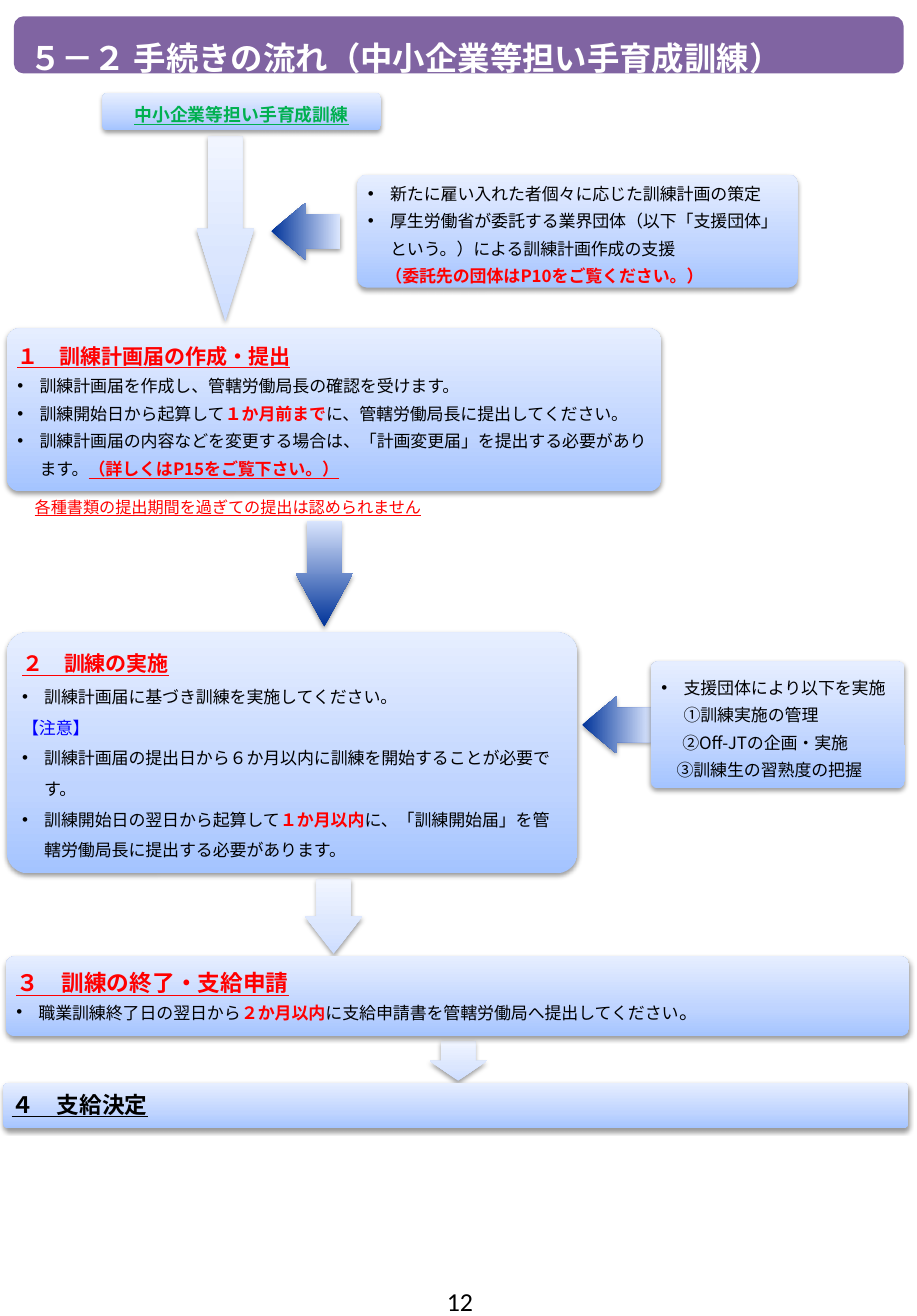
import pptx
import pptx.dml.color
import pptx.enum.lang
import pptx.enum.shapes
import pptx.enum.text
import pptx.oxml.ns
import pptx.util
from lxml import etree

COLORS = {
    "purple": "8064A2", "white": "FFFFFF", "black": "000000",
    "red": "FF0000", "green": "00B050", "blue": "0000FF",
}
GRADIENTS = {
    "box": [(0, "A4C4FF"), (35, "BFD4FF"), (100, "E6EEFF")],
    "pale": [(0, "CDDDFF"), (35, "DBE6FE"), (100, "F1F5FF")],
    "dark": [(0, "003399"), (100, "DBE6FE")],
}
JAPANESE_FONT = "Noto Sans CJK JP"

# Run styles: size in points, colour, bold, underline
STYLES = {
    "title": (20, "white", True, False),
    "course": (11, "green", True, True),
    "step": (13, "red", True, True),
    "large step": (14, "red", True, True),
    "last step": (14, "black", True, True),
    "body": (10.5, "black", False, False),
    "stop": (12, "black", False, False),
    "deadline": (10.5, "red", True, False),
    "reference": (10.5, "red", True, True),
    "caution": (10.5, "blue", False, False),
    "note": (10, "red", False, True),
    "number": (16, "black", False, False),
}

# Slide size in points; the grid has square cells of a tenth of an inch
SLIDE_WIDTH, SLIDE_HEIGHT = 567, 813.63
CELL = 0.1
BULLET_INDENT = 1.9
ARROW_WIDTH, SHAFT_SHARE, HEAD_SHARE = 4.9, 0.6, 0.5

BANNER = (1.2, 1.4, 76.4, 4.9)
TITLE = [(0, [("５－２ 手続きの流れ（中小企業等担い手育成訓練）", "title")])]
NOTE = [(0, [("各種書類の提出期間を過ぎての提出は認められません", "note")])]
PAGE_NUMBER = [(0, [("12", "number")])]

# name: (left, top, width, height), corner radius, inset, line spacing, paragraphs
# Line spacing is in points, or in lines when below 2
# A paragraph is an indent ("bullet" or columns) and its runs
BOXES = {
    "course": ((8.8, 8, 23.9, 3.2), 0.4, 0.9, 17, [
        (0, [("中小企業等担い手育成訓練", "course")])]),
    "plan": ((0.6, 28.2, 56.2, 14), 1.1, 0.9, 17, [
        (0, [("１　訓練計画届の作成・提出", "step")]),
        ("bullet", [("訓練計画届を作成し、管轄労働局長の確認を受けます。", "body")]),
        ("bullet", [("訓練開始日から起算して", "body"), ("１か月前まで", "deadline"),
                    ("に、管轄労働局長に提出してください。", "body")]),
        ("bullet", [("訓練計画届の内容などを変更する場合は、「計画変更届」を提出する必要があります。", "body"),
                    ("（詳しくはP15をご覧下さい。）", "reference")])]),
    "training": ((0.6, 54.3, 49, 20.7), 1.8, 1.3, 19, [
        (0, [("２　訓練の実施", "step")]),
        ("bullet", [("訓練計画届に基づき訓練を実施してください。", "body")]),
        (0, [("【注意】", "caution")]),
        ("bullet", [("訓練計画届の提出日から６か月以内に訓練を開始することが必要です。", "body")]),
        ("bullet", [("訓練開始日の翌日から起算して", "body"), ("１か月以内", "deadline"),
                    ("に、「訓練開始届」を管轄労働局長に提出する必要があります。", "body")])]),
    "application": ((0.5, 82.1, 77.6, 6.9), 0.8, 0.9, 17, [
        (0, [("３　訓練の終了・支給申請", "large step")]),
        ("bullet", [("職業訓練終了日の翌日から", "body"), ("２か月以内", "deadline"),
                    ("に支給申請書を管轄労働局へ提出してください", "body"), ("。", "stop")])]),
    "decision": ((0.3, 93, 77.7, 3.9), 0.4, 0.7, 0.9, [
        (0, [("４　支給決定", "last step")])]),
    "plan support": ((30.7, 15, 37.8, 9.7), 0.8, 0.9, 17, [
        ("bullet", [("新たに雇い入れた者個々に応じた訓練計画の策定", "body")]),
        ("bullet", [("厚生労働省が委託する業界団体（以下「支援団体」という。）による訓練計画作成の支援", "body")]),
        (1.5, [("（委託先の団体はP10をご覧ください。）", "deadline")])]),
    "training support": ((55.9, 56.8, 21.8, 10.9), 0.6, 0.9, 17, [
        ("bullet", [("支援団体により以下を実施①訓練実施の管理", "body")]),
        (1.8, [("②Off-JTの企画・実施", "body")]),
        (1.3, [("③訓練生の習熟度の把握", "body")])]),
}
# upper box, lower box, left, gap above, gap below, gradient
DOWN_ARROWS = [
    ("course", "plan", 16.9, 0.5, 0.6, "pale"),
    ("plan", "training", 25.4, 2.5, 0.5, "dark"),
    ("training", "application", 26.2, 0.5, 0.2, "pale"),
    ("application", "decision", 36.9, 0.4, 0.2, "pale"),
]
LEFT_ARROWS = [(23.3, 17.4), (50, 59.8)]
LEFT_ARROW_LENGTH = 5.9

MSO_SHAPE = pptx.enum.shapes.MSO_SHAPE
ALIGN = pptx.enum.text.PP_ALIGN
ANCHOR = pptx.enum.text.MSO_ANCHOR


def cells(count):
    return pptx.util.Inches(count * CELL)


def rgb(name):
    return pptx.dml.color.RGBColor.from_string(COLORS[name])


def add_node(parent, tag, **attributes):
    return etree.SubElement(parent, pptx.oxml.ns.qn(tag), **attributes)


def write(shape, paragraphs, insets, line_spacing=1.0, align=ALIGN.LEFT,
          anchor=ANCHOR.MIDDLE, font=JAPANESE_FONT):
    """Fill a shape with paragraphs; insets are (sides, top and bottom) in cells."""
    frame = shape.text_frame
    frame.word_wrap = True
    frame.auto_size = pptx.enum.text.MSO_AUTO_SIZE.NONE
    frame.vertical_anchor = anchor
    frame.margin_left = frame.margin_right = cells(insets[0])
    frame.margin_top = frame.margin_bottom = cells(insets[1])
    spacing = line_spacing if line_spacing < 2 else pptx.util.Pt(line_spacing)
    for index, (indent, runs) in enumerate(paragraphs):
        paragraph = frame.add_paragraph() if index else frame.paragraphs[0]
        paragraph.alignment = align
        paragraph.line_spacing = spacing
        properties = paragraph._p.get_or_add_pPr()
        if indent == "bullet":
            properties.set("marL", str(cells(BULLET_INDENT)))
            properties.set("indent", str(-cells(BULLET_INDENT)))
            add_node(properties, "a:buFont", typeface="Arial")
            add_node(properties, "a:buChar", char="•")
        elif indent:
            properties.set("marL", str(cells(indent)))
            properties.set("indent", "0")
        for text, style in runs:
            size, color, bold, underline = STYLES[style]
            run = paragraph.add_run()
            run.text = text
            run.font.size = pptx.util.Pt(size)
            run.font.bold = bold
            run.font.underline = underline
            run.font.color.rgb = rgb(color)
            run.font.name = font
            run.font.language_id = pptx.enum.lang.MSO_LANGUAGE_ID.JAPANESE
            add_node(run._r.get_or_add_rPr(), "a:ea", typeface=JAPANESE_FONT)


def add_gradient_shape(slide, kind, place, gradient, angle, adjustments):
    """Add a borderless shape with a gradient and a soft shadow below it."""
    shape = slide.shapes.add_shape(kind, *map(cells, place))
    for index, value in enumerate(adjustments):
        shape.adjustments[index] = value
    shape.line.fill.background()
    shape.fill.gradient()
    shape.fill.gradient_angle = angle
    properties = shape.element.spPr
    stops = properties.find(".//" + pptx.oxml.ns.qn("a:gsLst"))
    for stop in list(stops):
        stops.remove(stop)
    for position, color in GRADIENTS[gradient]:
        stop = add_node(stops, "a:gs", pos=str(position * 1000))
        add_node(stop, "a:srgbClr", val=color)
    shape.shadow.inherit = False
    effects = properties.find(pptx.oxml.ns.qn("a:effectLst"))
    shadow = add_node(effects, "a:outerShdw", blurRad=str(pptx.util.Pt(3.1)),
                      dist=str(pptx.util.Pt(1.6)), dir="5400000", rotWithShape="0")
    shadow_color = add_node(shadow, "a:srgbClr", val=COLORS["black"])
    add_node(shadow_color, "a:alpha", val="38000")
    return shape


def add_arrow(slide, kind, place, gradient, angle):
    length = place[2] if kind == MSO_SHAPE.LEFT_ARROW else place[3]
    head = length * HEAD_SHARE / min(place[2:])
    add_gradient_shape(slide, kind, place, gradient, angle, [SHAFT_SHARE, head])


def add_banner(slide):
    banner = slide.shapes.add_shape(MSO_SHAPE.ROUNDED_RECTANGLE, *map(cells, BANNER))
    banner.shadow.inherit = False
    banner.fill.solid()
    banner.fill.fore_color.rgb = rgb("purple")
    banner.line.fill.background()
    title = slide.shapes.title
    title.left, title.top, title.width, title.height = map(cells, BANNER)
    write(title, TITLE, (1.3, 0.7), 40)
    banner.element.addnext(title.element)


def main():
    presentation = pptx.Presentation()
    presentation.slide_width = pptx.util.Pt(SLIDE_WIDTH)
    presentation.slide_height = pptx.util.Pt(SLIDE_HEIGHT)
    slide = presentation.slides.add_slide(presentation.slide_layouts[5])
    add_banner(slide)

    for upper, lower, left, above, below, gradient in DOWN_ARROWS:
        upper_place, lower_place = BOXES[upper][0], BOXES[lower][0]
        top = upper_place[1] + upper_place[3] + above
        place = (left, top, ARROW_WIDTH, lower_place[1] - below - top)
        add_arrow(slide, MSO_SHAPE.DOWN_ARROW, place, gradient, 90)
    for left, top in LEFT_ARROWS:
        place = (left, top, LEFT_ARROW_LENGTH, ARROW_WIDTH)
        add_arrow(slide, MSO_SHAPE.LEFT_ARROW, place, "dark", 0)

    for name, (place, radius, inset, line_spacing, paragraphs) in BOXES.items():
        box = add_gradient_shape(slide, MSO_SHAPE.ROUNDED_RECTANGLE, place, "box", 90,
                                 [radius / min(place[2:])])
        inner = inset - 0.29 * radius  # rounded corners already push the text inwards
        write(box, paragraphs, (inner, inner), line_spacing,
              ALIGN.CENTER if name == "course" else ALIGN.LEFT)

    note = slide.shapes.add_textbox(*map(cells, (2, 42.2, 37.4, 3.3)))
    write(note, NOTE, (1, 0.5), anchor=ANCHOR.TOP)
    number = slide.shapes.add_textbox(*map(cells, (35.8, 109.3, 7.4, 4.9)))
    write(number, PAGE_NUMBER, (1.1, 0.5), align=ALIGN.CENTER, font="Calibri")
    presentation.save("out.pptx")


if __name__ == "__main__":
    main()
